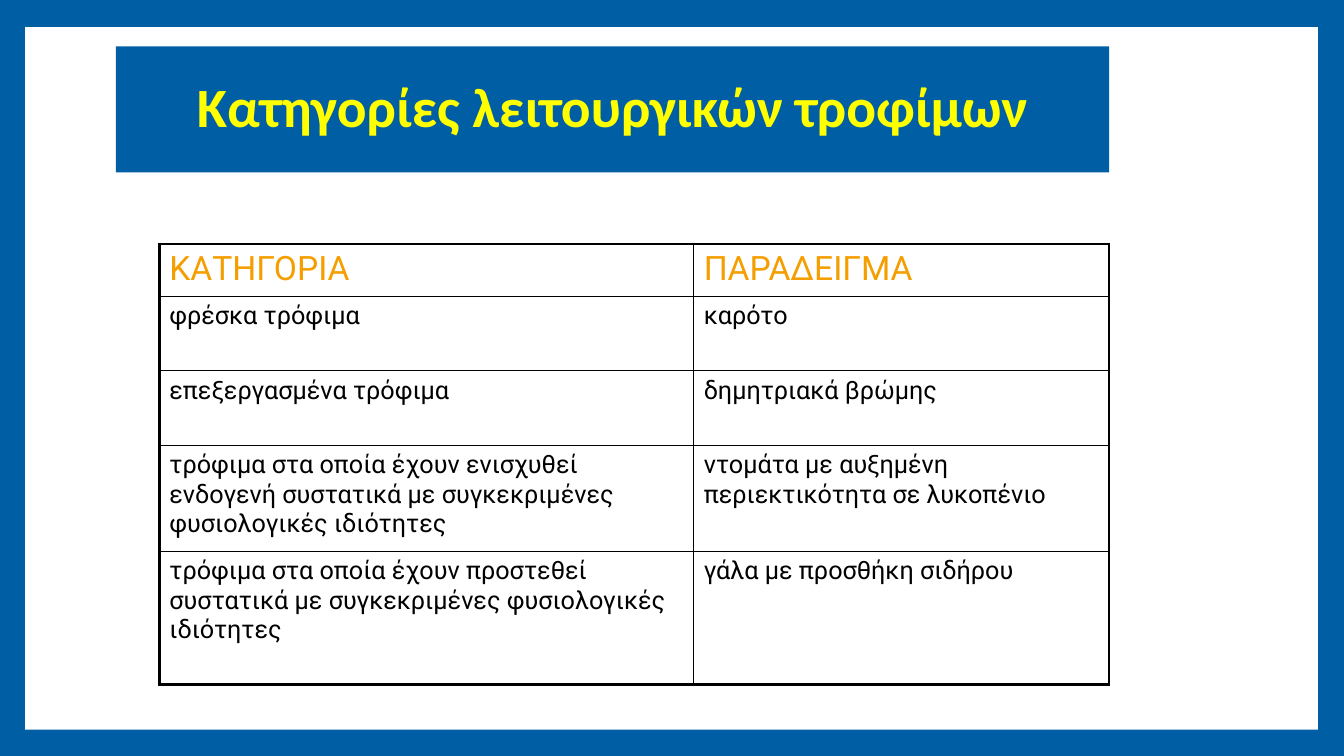
from dataclasses import dataclass

from lxml import etree
from pptx import Presentation
from pptx import util as u
from pptx.dml.color import RGBColor
from pptx.enum import shapes, text
from pptx.oxml.ns import qn


@dataclass(frozen=True)
class Theme:
    blue: str = "005EA4"
    white: str = "FFFFFF"
    yellow: str = "FFFF00"
    orange: str = "F59E00"
    black: str = "000000"
    title_font: str = "Calibri"
    body_font: str = "Roboto"
    title_size: float = 39.6
    header_size: float = 24
    body_size: float = 18
    outer_line: float = 2.25
    inner_line: float = 1


class SlideBuilder:
    def __init__(self, prs, theme):
        self.theme = theme
        self.slide = prs.slides.add_slide(prs.slide_layouts[5])

    def paint(self, fill, color):
        fill.solid()
        fill.fore_color.rgb = RGBColor.from_string(color)

    def format_runs(self, p, font, size, color, bold=False):
        for r in p.runs:
            r.font.name = font
            r.font.size = u.Pt(size)
            r.font.bold = bold
            r.font.color.rgb = RGBColor.from_string(color)

    def background(self):
        self.paint(self.slide.background.fill, self.theme.blue)

    def panel(self, *box):
        """Add a white rectangle behind everything else."""
        sp = self.slide.shapes.add_shape(
            shapes.MSO_SHAPE.RECTANGLE, *map(u.Inches, box))
        sp.shadow.inherit = False
        self.paint(sp.fill, self.theme.white)
        sp.line.fill.background()
        self.slide.shapes._spTree.insert(2, sp._element)

    def title(self, words, *box):
        sp = self.slide.shapes.title
        sp.left, sp.top, sp.width, sp.height = map(u.Inches, box)
        self.paint(sp.fill, self.theme.blue)
        tf = sp.text_frame
        tf.text = words
        tf.word_wrap = True
        tf.auto_size = text.MSO_AUTO_SIZE.NONE
        tf.vertical_anchor = text.MSO_ANCHOR.MIDDLE
        p = tf.paragraphs[0]
        p.alignment = text.PP_ALIGN.CENTER
        p.line_spacing = 0.9
        self.format_runs(p, self.theme.title_font, self.theme.title_size,
                         self.theme.yellow, bold=True)

    def border(self, cell, side, width):
        ln = etree.SubElement(cell._tc.get_or_add_tcPr(), qn(f"a:ln{side}"),
                              w=str(u.Pt(width)))
        fill = etree.SubElement(ln, qn("a:solidFill"))
        etree.SubElement(fill, qn("a:srgbClr"), val=self.theme.black)

    def space_before_percent(self, p, percent):
        spacing = etree.SubElement(p._p.get_or_add_pPr(), qn("a:spcBef"))
        etree.SubElement(spacing, qn("a:spcPct"), val=str(percent * 1000))

    def table(self, rows, left, top, widths, heights):
        t = self.theme
        frame = self.slide.shapes.add_table(
            len(rows), len(widths),
            *map(u.Inches, (left, top, sum(widths), sum(heights))))
        table = frame.table
        table.horz_banding = False
        for column, width in zip(table.columns, widths):
            column.width = u.Inches(width)
        for row, height in zip(table.rows, heights):
            row.height = u.Inches(height)
        for i, row in enumerate(rows):
            for j, words in enumerate(row):
                cell = table.cell(i, j)
                cell.text = words
                outer = {"L": j == 0, "R": j == len(row) - 1,
                         "T": i == 0, "B": i == len(rows) - 1}
                for side, is_outer in outer.items():
                    self.border(cell, side,
                                t.outer_line if is_outer else t.inner_line)
                cell.fill.background()
                p = cell.text_frame.paragraphs[0]
                self.space_before_percent(p, 20)
                size, color = ((t.header_size, t.orange) if i == 0
                               else (t.body_size, t.black))
                self.format_runs(p, t.body_font, size, color)


FOODS = [
    ("ΚΑΤΗΓΟΡΙΑ", "ΠΑΡΑΔΕΙΓΜΑ"),
    ("φρέσκα τρόφιμα", "καρότο"),
    ("επεξεργασμένα τρόφιμα", "δημητριακά βρώμης"),
    ("τρόφιμα στα οποία έχουν ενισχυθεί ενδογενή συστατικά με "
     "συγκεκριμένες φυσιολογικές ιδιότητες",
     "ντομάτα με αυξημένη περιεκτικότητα σε λυκοπένιο"),
    ("τρόφιμα στα οποία έχουν προστεθεί συστατικά με "
     "συγκεκριμένες φυσιολογικές ιδιότητες",
     "γάλα με προσθήκη σιδήρου"),
]


def main():
    prs = Presentation()
    prs.slide_width, prs.slide_height = u.Inches(13.33), u.Inches(7.5)
    s = SlideBuilder(prs, Theme())
    s.background()
    s.panel(0.25, 0.27, 12.82, 6.97)
    s.title("Κατηγορίες λειτουργικών τροφίμων", 1.15, 0.46, 9.85, 1.25)
    s.table(FOODS, 1.58, 2.42, (5.3, 4.12), (0.52, 0.74, 0.74, 1.05, 1.32))
    prs.save("out.pptx")


if __name__ == "__main__":
    main()
